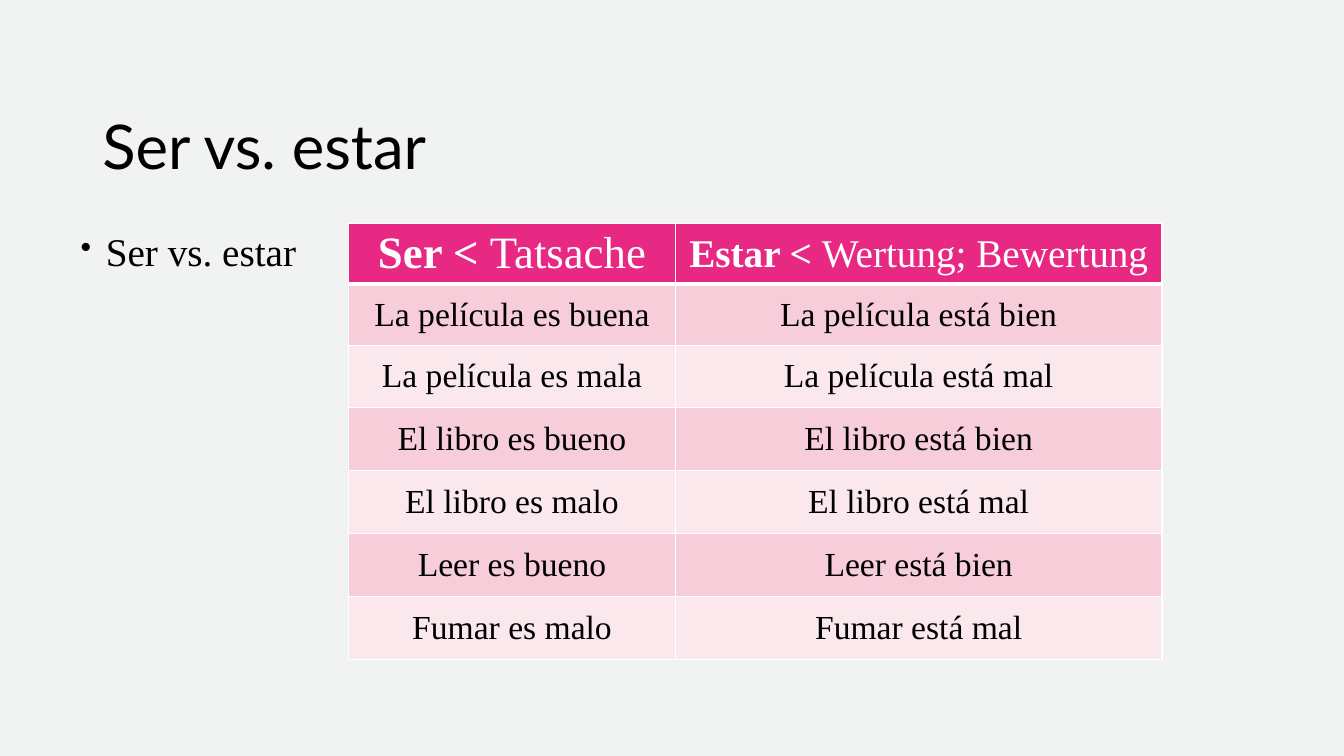
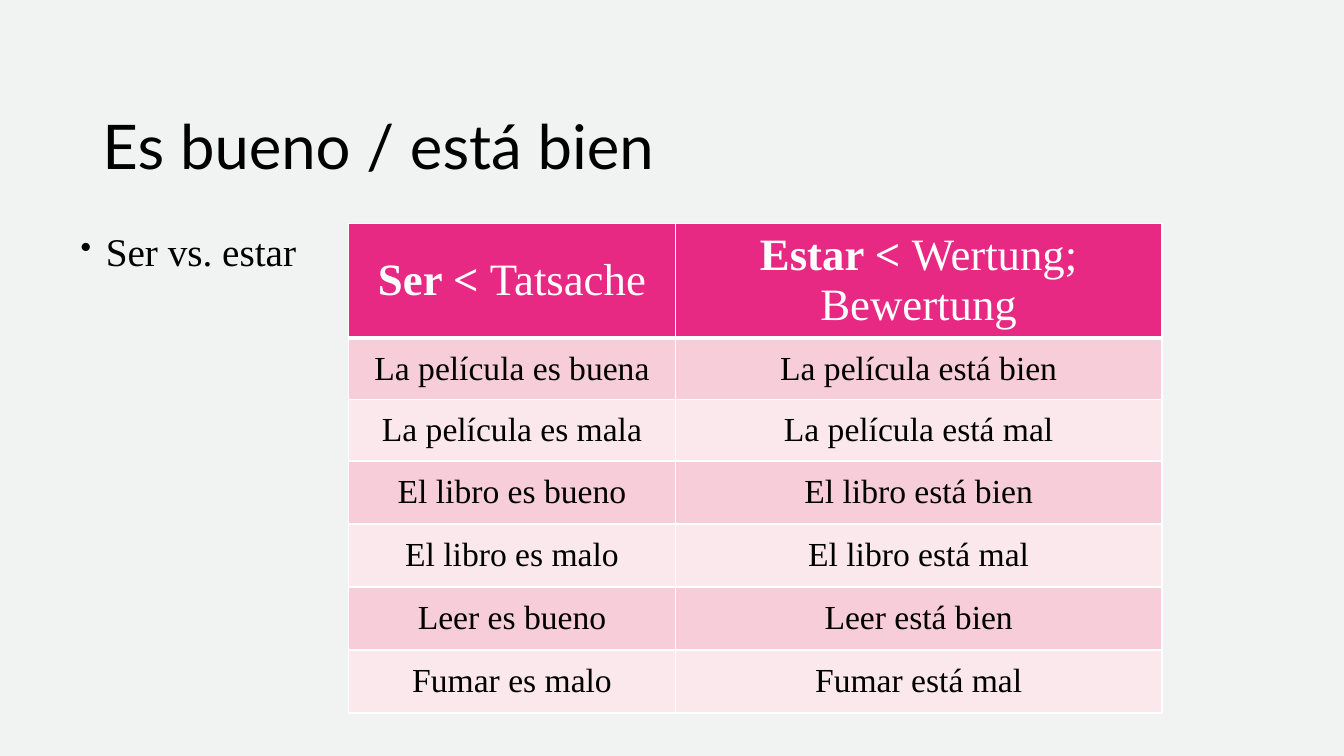
import pptx
import pptx.dml.color
import pptx.enum.text
import pptx.oxml
import pptx.oxml.ns
import pptx.util

Pt = pptx.util.Pt
ALIGN = pptx.enum.text.PP_ALIGN
ANCHOR = pptx.enum.text.MSO_ANCHOR

COLORS = {
    "background": "F0F3F2",
    "text": "000000",
    "white": "FFFFFF",
    "header": "E72983",
    "odd_row": "F6CDD9",
    "even_row": "FAE8ED",
}
TITLE_FONT = "Lato"
BODY_FONT = "Times New Roman"

COLUMN_WIDTHS = [233.5, 347.5]
ROW_HEIGHTS = [44, 44, 45, 45, 45, 45]
EXAMPLES = [
    ("La película es buena", "La película está bien"),
    ("La película es mala", "La película está mal"),
    ("El libro es bueno", "El libro está bien"),
    ("El libro es malo", "El libro está mal"),
    ("Leer es bueno", "Leer está bien"),
    ("Fumar es malo", "Fumar está mal"),
]
HEADINGS = [("Ser < ", "Tatsache"), ("Estar < ", "Wertung; Bewertung")]

# Title, header row height, text size of each heading
PAGES = [
    ("Ser vs. estar", 42, (32, 28)),
    ("Es bueno / está bien", 78.5, (32, 32)),
]


def rgb(name):
    return pptx.dml.color.RGBColor.from_string(COLORS[name])


def add_run(para, text, size, color="text", font=BODY_FONT, bold=False):
    span = para.add_run()
    span.text = text
    span.font.size = Pt(size)
    span.font.name = font
    span.font.bold = bold
    span.font.color.rgb = rgb(color)


def add_xml(parent, tag, body="", **attributes):
    values = " ".join(f'{key}="{value}"' for key, value in attributes.items())
    namespace = pptx.oxml.ns.nsdecls("a")
    parent.append(pptx.oxml.parse_xml(f"<a:{tag} {namespace} {values}>{body}</a:{tag}>"))


def place(box, left, top, width, height):
    box.left, box.top, box.width, box.height = map(Pt, (left, top, width, height))


def set_title(page, text):
    title = page.shapes.title
    place(title, 66, 46, 828, 88)
    frame = title.text_frame
    frame.auto_size = pptx.enum.text.MSO_AUTO_SIZE.NONE
    frame.vertical_anchor = ANCHOR.BOTTOM
    para = frame.paragraphs[0]
    para.alignment = ALIGN.LEFT
    para.line_spacing = 0.9
    add_run(para, text, 44, font=TITLE_FONT)


def add_bullet(page, text):
    box = page.shapes.add_textbox(Pt(50.5), Pt(155.5), Pt(860), Pt(355.5))
    box.text_frame.word_wrap = True
    para = box.text_frame.paragraphs[0]
    para.line_spacing = 1.1
    para.space_before = Pt(10)
    add_run(para, text, 28)
    properties = para._p.get_or_add_pPr()
    properties.set("marL", str(Pt(18)))
    properties.set("indent", str(Pt(-18)))
    add_xml(properties, "buSzPct", val=80000)
    add_xml(properties, "buChar", char="•")


def style_cell(cell, fill, top=1, bottom=1):
    cell.vertical_anchor = ANCHOR.MIDDLE
    cell.margin_top = cell.margin_bottom = Pt(2.5)
    cell.text_frame.paragraphs[0].alignment = ALIGN.CENTER
    properties = cell._tc.get_or_add_tcPr()
    line_fill = f'<a:solidFill><a:srgbClr val="{COLORS["white"]}"/></a:solidFill>'
    for side, width in (("L", 1), ("R", 1), ("T", top), ("B", bottom)):
        add_xml(properties, f"ln{side}", line_fill, w=Pt(width))
    cell.fill.solid()
    cell.fill.fore_color.rgb = rgb(fill)


def add_comparison(page, header_height, heading_sizes):
    heights = [header_height] + ROW_HEIGHTS
    frame = page.shapes.add_table(
        len(heights), len(COLUMN_WIDTHS), Pt(249), Pt(159.5),
        Pt(sum(COLUMN_WIDTHS)), Pt(sum(heights)))
    table = frame.table
    for column, width in zip(table.columns, COLUMN_WIDTHS):
        column.width = Pt(width)
    for row, height in zip(table.rows, heights):
        row.height = Pt(height)

    # Header row: bold verb, plain meaning
    for column, ((verb, meaning), size) in enumerate(zip(HEADINGS, heading_sizes)):
        cell = table.cell(0, column)
        style_cell(cell, "header", bottom=3)
        para = cell.text_frame.paragraphs[0]
        add_run(para, verb, size, "white", bold=True)
        add_run(para, meaning, size, "white")

    # Example rows in alternating fills
    for row, pair in enumerate(EXAMPLES, start=1):
        for column, text in enumerate(pair):
            cell = table.cell(row, column)
            style_cell(cell, "odd_row" if row % 2 else "even_row", top=3 if row == 1 else 1)
            add_run(cell.text_frame.paragraphs[0], text, 24)


def main():
    deck = pptx.Presentation()
    deck.slide_width, deck.slide_height = Pt(960), Pt(540)
    background = deck.slide_master.background.fill
    background.solid()
    background.fore_color.rgb = rgb("background")
    for title, header_height, heading_sizes in PAGES:
        page = deck.slides.add_slide(deck.slide_layouts.get_by_name("Title Only"))
        set_title(page, title)
        add_bullet(page, "Ser vs. estar")
        add_comparison(page, header_height, heading_sizes)
    deck.save("out.pptx")


if __name__ == "__main__":
    main()
